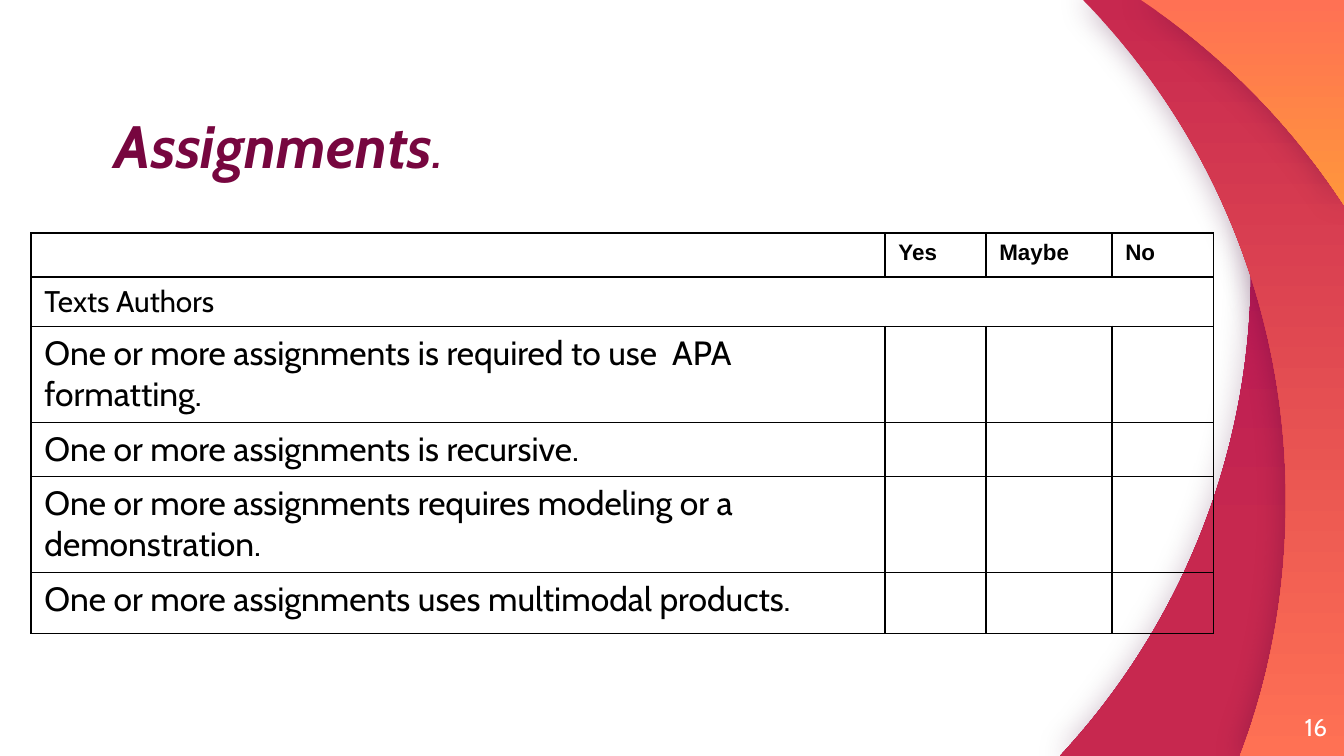
from lxml import etree
from pptx import Presentation
from pptx.dml.color import RGBColor
from pptx.enum.text import MSO_ANCHOR, PP_ALIGN
from pptx.oxml.ns import qn
from pptx.util import Pt

TOP, MIDDLE, BOTTOM = MSO_ANCHOR.TOP, MSO_ANCHOR.MIDDLE, MSO_ANCHOR.BOTTOM
LEFT, RIGHT = PP_ALIGN.LEFT, PP_ALIGN.RIGHT
PX = 914400 / 134.4
WIDTH, HEIGHT = 1344, 756
COLORS = {
    "wine": "77063F", "black": "000000", "white": "FFFFFF", "shadow": "410433",
    "magenta": "AC0C5C", "crimson": "C7284F", "coral": "FF7154", "orange": "FF963C",
}

TITLE = [("Assignments", True), (".", False)]
PAGE_NUMBER = "16"
ANSWERS = ["Yes", "Maybe", "No"]
SECTION = "Texts Authors"
STATEMENTS = [
    "One or more assignments is required to use  APA formatting.",
    "One or more assignments is recursive.",
    "One or more assignments requires modeling or a demonstration.",
    "One or more assignments uses multimodal products.",
]
TABLE_LEFT, TABLE_TOP = 31, 233
COLUMNS = [854, 101, 126, 102]
ROWS = [44, 49, 96, 54, 96, 61]

# Each step is a list of points: one for a line, three for a curve.
SWOOSHES = [
    {"start": (1199, 0),
     "steps": [[(1234, 86), (1251, 176), (1251, 269)], [(1251, 457), (1179, 628), (1060, 756)],
               [(1344, 756)], [(1344, 0)]],
     "stops": [(0, "magenta"), (0.72, "crimson")], "shade": 25},
    {"start": (1083, 0),
     "steps": [[(1210, 129), (1286, 306), (1286, 501)], [(1286, 589), (1271, 675), (1240, 756)],
               [(1344, 756)], [(1344, 0)]],
     "stops": [(0, "crimson"), (1, "coral")], "shade": 35},
    {"start": (1344, 205),
     "steps": [[(1344, 0)], [(1141, 0)], [(1222, 54), (1291, 124), (1344, 205)]],
     "stops": [(0, "coral"), (1, "orange")], "shade": 30},
]


def emu(px):
    return round(px * PX)


def rgb(name):
    return RGBColor.from_string(COLORS[name])


def bend(shape, start, steps):
    """Turn the straight segments of three-point steps into Bezier curves."""
    corners = [start] + [step[-1] for step in steps]
    left, top = (min(axis) for axis in zip(*corners))
    segments = list(shape.element.spPr.iter(qn("a:lnTo")))
    for segment, step in zip(segments, steps):
        if len(step) == 3:
            curve = etree.Element(qn("a:cubicBezTo"))
            for x, y in step:
                etree.SubElement(curve, qn("a:pt"), x=str(x - left), y=str(y - top))
            segment.getparent().replace(segment, curve)


def add_swoosh(page, start, steps, stops, shade):
    builder = page.shapes.build_freeform(*start, scale=PX)
    builder.add_line_segments([step[-1] for step in steps], close=True)
    shape = builder.convert_to_shape()
    bend(shape, start, steps)
    shape.line.fill.background()
    shape.fill.gradient()
    shape.fill.gradient_angle = 270
    for stop, (position, color) in zip(shape.fill.gradient_stops, stops):
        stop.position = position
        stop.color.rgb = rgb(color)
    shape.shadow.inherit = False
    effects = shape.element.spPr.find(qn("a:effectLst"))
    shadow = etree.SubElement(effects, qn("a:outerShdw"), blurRad=str(Pt(16.9)), dist="0",
                              algn="ctr", rotWithShape="0")
    tint = etree.SubElement(shadow, qn("a:srgbClr"), val=COLORS["shadow"])
    etree.SubElement(tint, qn("a:alpha"), val=str(shade * 1000))


def write(frame, spans, size=18, font="Cabin", color="black", italic=False,
          align=LEFT, anchor=TOP, spacing=1.0):
    """Fill a frame with one paragraph of (text, bold) spans."""
    frame.word_wrap = True
    frame.vertical_anchor = anchor
    para = frame.paragraphs[0]
    para.alignment = align
    para.line_spacing = spacing
    for text, bold in spans:
        span = para.add_run()
        span.text = text
        span.font.size = Pt(size)
        span.font.name = font
        span.font.bold = bold
        span.font.italic = italic
        span.font.color.rgb = rgb(color)
    if not spans:
        etree.SubElement(para._p, qn("a:endParaRPr"), sz=str(size * 100))


def add_text(page, spans, left, top, width, height, **style):
    box = page.shapes.add_textbox(*map(emu, (left, top, width, height)))
    frame = box.text_frame
    frame.margin_left = frame.margin_right = frame.margin_top = frame.margin_bottom = 0
    write(frame, spans, **style)


def outline(cell):
    cell.fill.background()
    properties = cell._tc.get_or_add_tcPr()
    for index, side in enumerate(("lnL", "lnR", "lnT", "lnB")):
        line = etree.Element(qn(f"a:{side}"), w=str(Pt(0.75)))
        fill = etree.SubElement(line, qn("a:solidFill"))
        etree.SubElement(fill, qn("a:srgbClr"), val=COLORS["black"])
        properties.insert(index, line)


def add_checklist(page):
    frame = page.shapes.add_table(
        len(ROWS), len(COLUMNS),
        *map(emu, (TABLE_LEFT, TABLE_TOP, sum(COLUMNS), sum(ROWS))))
    table = frame.table
    table.first_row = table.horz_banding = False
    for column, width in zip(table.columns, COLUMNS):
        column.width = emu(width)
    for row, height in zip(table.rows, ROWS):
        row.height = emu(height)

    blanks = [""] * len(ANSWERS)
    lines = [["", *ANSWERS], [SECTION, *blanks]] + [[text, *blanks] for text in STATEMENTS]
    styles = [{"size": 12, "font": "Arial"}, {"size": 16}] + [{"size": 18}] * len(STATEMENTS)
    for r, (line, style) in enumerate(zip(lines, styles)):
        for c, text in enumerate(line):
            cell = table.cell(r, c)
            write(cell.text_frame, [(text, r == 0)] if text else [], **style)
            outline(cell)
    table.cell(1, 0).merge(table.cell(1, len(COLUMNS) - 1))


def main():
    deck = Presentation()
    deck.slide_width, deck.slide_height = emu(WIDTH), emu(HEIGHT)
    page = deck.slides.add_slide(deck.slide_layouts[6])
    page.background.fill.solid()
    page.background.fill.fore_color.rgb = rgb("white")
    for swoosh in SWOOSHES:
        add_swoosh(page, **swoosh)
    add_text(page, TITLE, 115, 123, 1023, 58, size=32, color="wine", italic=True,
             anchor=BOTTOM, spacing=0.9)
    add_text(page, [(PAGE_NUMBER, False)], 1246, 698, 81, 58, size=13, color="white",
             align=RIGHT, anchor=MIDDLE)
    add_checklist(page)
    deck.save("out.pptx")


if __name__ == "__main__":
    main()
